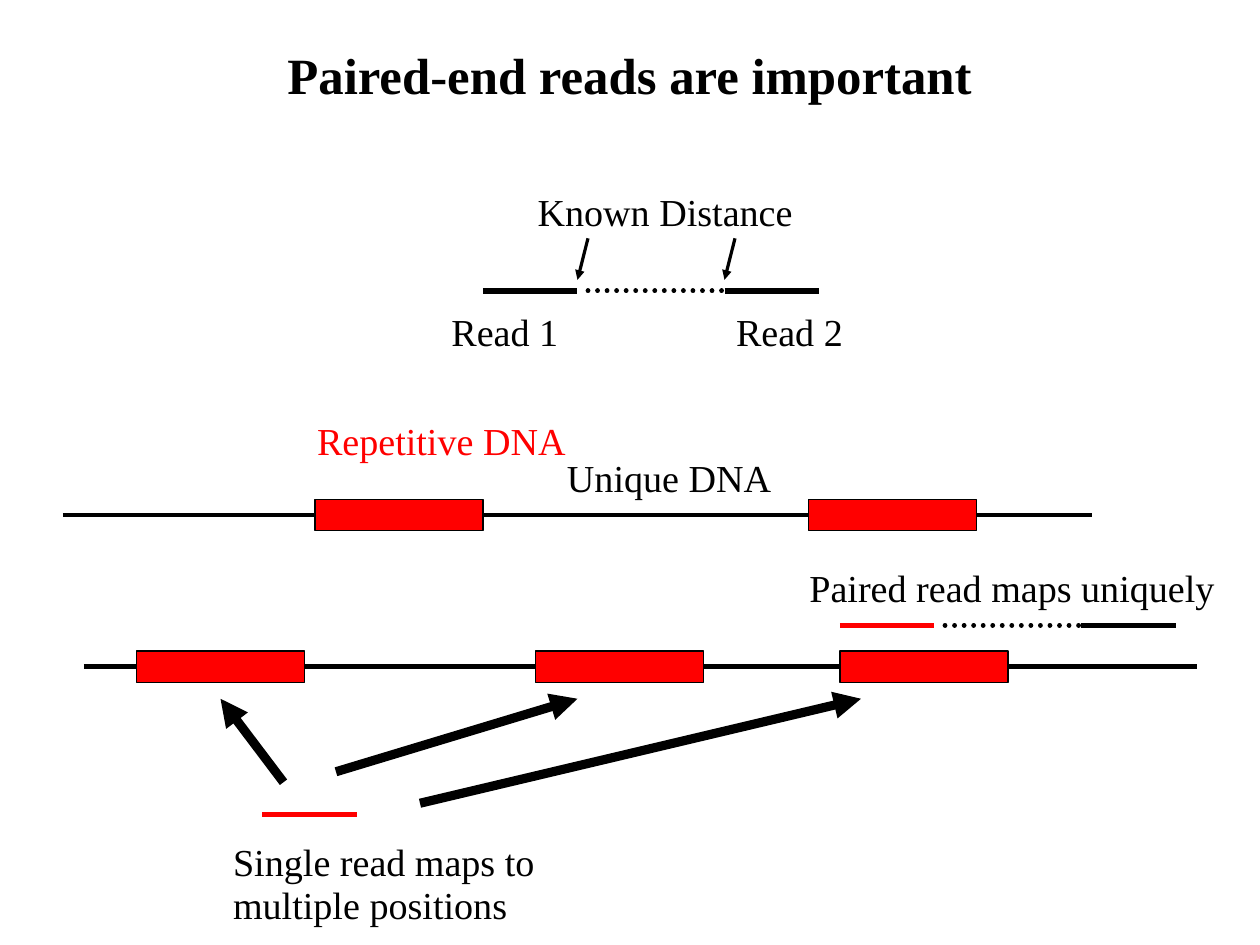
"""Build a slide on how paired-end reads map to repetitive DNA."""
from dataclasses import dataclass

from lxml.etree import SubElement
from pptx import Presentation
from pptx.dml.color import RGBColor
from pptx.enum.dml import MSO_LINE
from pptx.enum.shapes import MSO_CONNECTOR, MSO_SHAPE
from pptx.enum.text import MSO_ANCHOR, MSO_AUTO_SIZE, PP_ALIGN
from pptx.oxml.ns import qn
from pptx.util import Cm, Inches, Pt


@dataclass
class Theme:
    font: str = "Times New Roman"
    black: RGBColor = RGBColor(0, 0, 0)
    red: RGBColor = RGBColor(255, 0, 0)
    head: int = 32
    body: int = 24
    edge: float = 0.75
    thin: float = 2
    strand: float = 3
    read: float = 3.5
    bold: float = 5.75


theme = Theme()
deck = Presentation()
deck.slide_width, deck.slide_height = Cm(28), Cm(21)
col, row = deck.slide_width / 120, deck.slide_height / 90
slide = deck.slides.add_slide(deck.slide_layouts[5])
shapes = slide.shapes


def write(text, box, size=theme.body, color=theme.black, bold=False,
          align=PP_ALIGN.LEFT, anchor=MSO_ANCHOR.TOP, pad=(0.11, 0.06), wrap=False):
    frame = box.text_frame
    frame.text = text
    frame.word_wrap = wrap
    frame.auto_size = MSO_AUTO_SIZE.NONE if wrap else MSO_AUTO_SIZE.SHAPE_TO_FIT_TEXT
    frame.vertical_anchor = anchor
    frame.margin_left = frame.margin_right = Inches(pad[0])
    frame.margin_top = frame.margin_bottom = Inches(pad[1])
    for para in frame.paragraphs:
        para.alignment = align
        para.line_spacing = 0.93
        font = para.runs[0].font
        font.name, font.size, font.bold = theme.font, Pt(size), bold
        font.color.rgb = color


def draw(x1, y1, x2, y2, width, color=theme.black, dots=False, arrow=False):
    line = shapes.add_connector(MSO_CONNECTOR.STRAIGHT, round(x1 * col), round(y1 * row),
                                round(x2 * col), round(y2 * row))
    line.line.width = Pt(width)
    line.line.color.rgb = color
    edge = line.get_or_add_ln()
    if dots:
        line.line.dash_style = MSO_LINE.ROUND_DOT
        edge.set("cap", "rnd")
    if arrow:
        SubElement(edge, qn("a:tailEnd"), type="triangle")
    SubElement(edge.getparent(), qn("a:effectLst"))


title = shapes.title
title.left, title.top = round(8.8 * col), round(-0.1 * row)
title.width, title.height = round(102.4 * col), round(15 * row)
write("Paired-end reads are important", title, size=theme.head, bold=True,
      align=PP_ALIGN.CENTER, anchor=MSO_ANCHOR.MIDDLE, pad=(0, 0), wrap=True)

strands = [(6, 104, 49.05, (30, 77)), (8, 114, 63.5, (13, 51, 80))]
for start, end, mid, repeats in strands:
    draw(start, mid, end, mid, theme.strand)
    for left in repeats:
        block = shapes.add_shape(MSO_SHAPE.RECTANGLE, round(left * col), round((mid - 1.5) * row),
                                 round(16 * col), round(3 * row))
        block.shadow.inherit = False
        block.fill.solid()
        block.fill.fore_color.rgb = theme.red
        block.line.color.rgb = theme.black
        block.line.width = Pt(theme.edge)

for left, mid, color in [(46, 27.7, theme.black), (80, 59.55, theme.red)]:
    draw(left, mid, left + 9, mid, theme.read, color)
    draw(left + 10, mid, left + 23, mid, theme.strand, dots=True)
    draw(left + 23, mid, left + 32, mid, theme.read)

draw(25, 77.55, 34, 77.55, theme.read, theme.red)
for x1, y1, x2 in [(27, 74.5, 21), (32, 73.5, 55), (40, 76.5, 82)]:
    draw(x1, y1, x2, 66.55, theme.bold, arrow=True)
for tip in (55, 69):
    draw(tip + 1, 22.7, tip, 26.65, theme.thin, arrow=True)

labels = [
    ("Known Distance", 50, 17.65, 27, 5.3, theme.black),
    ("Read 1", 41.8, 29.1, 12.7, 5.3, theme.black),
    ("Read 2", 68.9, 29.1, 12.7, 5.3, theme.black),
    ("Repetitive DNA", 29, 39.5, 26.3, 5.3, theme.red),
    ("Unique DNA", 52.8, 43, 22.1, 5.3, theme.black),
    ("Paired read maps uniquely", 75.9, 53.5, 41.4, 5.3, theme.black),
    ("Single read maps to\nmultiple positions", 21, 79.6, 32.3, 9.4, theme.black),
]
for text, left, top, width, height, color in labels:
    box = shapes.add_textbox(round(left * col), round(top * row),
                             round(width * col), round(height * row))
    write(text, box, color=color)

deck.save("out.pptx")
